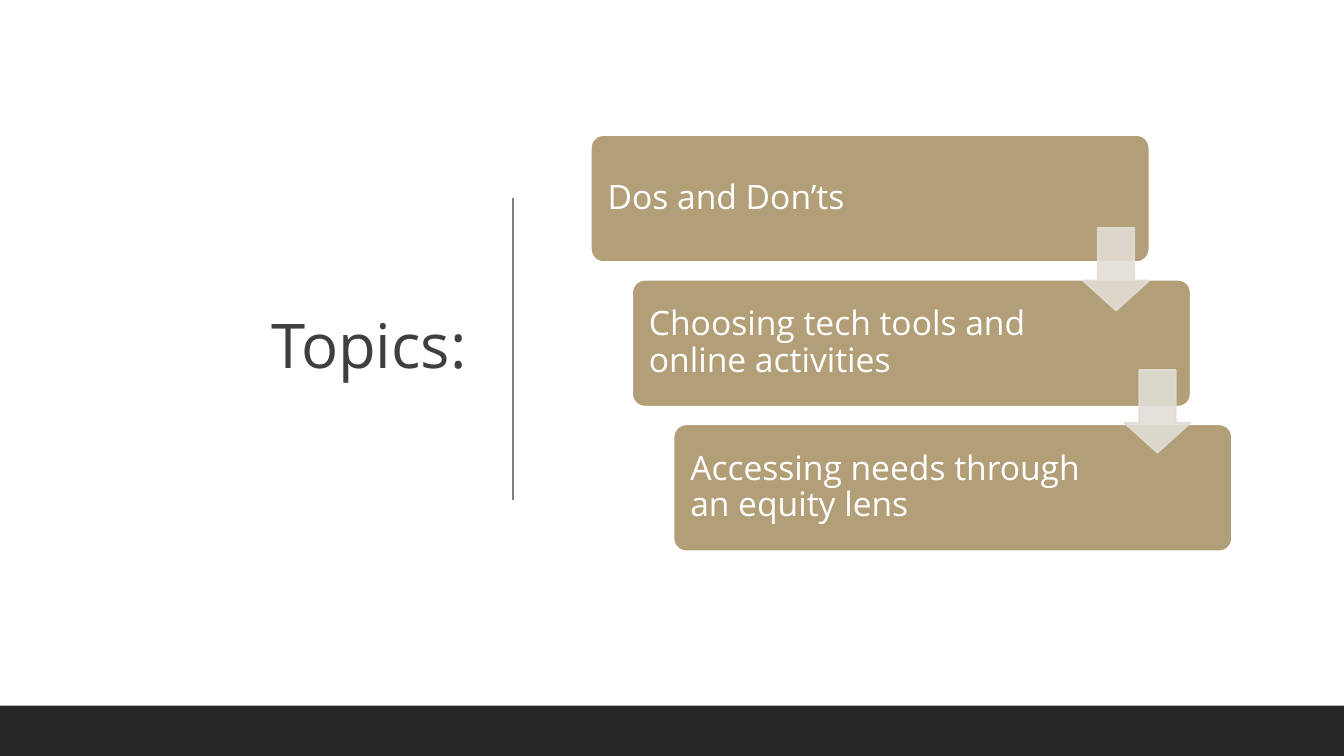
from lxml import etree
from pptx import Presentation
from pptx.dml.color import RGBColor
from pptx.enum.shapes import MSO_CONNECTOR, MSO_SHAPE
from pptx.enum.text import MSO_ANCHOR, PP_ALIGN
from pptx.oxml.ns import qn
from pptx.util import Inches, Pt

RECT, ROUND_RECT = MSO_SHAPE.RECTANGLE, MSO_SHAPE.ROUNDED_RECTANGLE
DOWN_ARROW, STRAIGHT = MSO_SHAPE.DOWN_ARROW, MSO_CONNECTOR.STRAIGHT
MIDDLE, LEFT, RIGHT = MSO_ANCHOR.MIDDLE, PP_ALIGN.LEFT, PP_ALIGN.RIGHT

FONT = "Open Sans"
WHITE = RGBColor(0xFF, 0xFF, 0xFF)
TITLE_GREY = RGBColor(0x3F, 0x3F, 0x3F)
RULE_GREY = RGBColor(0x7F, 0x7F, 0x7F)
BAR_BLACK = RGBColor(0x26, 0x26, 0x26)
CARD_TAN = RGBColor(0xB2, 0x9F, 0x78)
ARROW_COLORS = [RGBColor(0xE2, 0xDE, 0xD5), RGBColor(0xE0, 0xDE, 0xD5)]

SLIDE_W, SLIDE_H = 13.33, 7.5
TOPICS = [
    "Dos and Don’ts",
    "Choosing tech tools and online activities",
    "Accessing needs through an equity lens",
]


def add_block(slide, kind, x, y, w, h, fill, line=None):
    sp = slide.shapes.add_shape(kind, Inches(x), Inches(y), Inches(w), Inches(h))
    sp.shadow.inherit = False
    sp.fill.solid()
    sp.fill.fore_color.rgb = fill
    if line is None:
        sp.line.fill.background()
    else:
        sp.line.color.rgb = line
        sp.line.width = Pt(1.25)
    return sp


def write_text(sp, text, size, color, align, insets):
    tf = sp.text_frame
    tf.word_wrap = True
    tf.vertical_anchor = MIDDLE
    tf.margin_left, tf.margin_top, tf.margin_right, tf.margin_bottom = map(Inches, insets)
    p = tf.paragraphs[0]
    p.alignment = align
    p.line_spacing = 0.9
    r = p.add_run()
    r.text = text
    r.font.name = FONT
    r.font.size = Pt(size)
    r.font.color.rgb = color


def set_alpha(sp, percent):
    # Fill and outline share the same transparency
    for color in sp._element.spPr.iter(qn("a:srgbClr")):
        etree.SubElement(color, qn("a:alpha")).set("val", str(percent * 1000))


def add_title(slide, x, y, w, h):
    sp = slide.shapes.add_textbox(Inches(x), Inches(y), Inches(w), Inches(h))
    write_text(sp, "Topics:", 44, TITLE_GREY, RIGHT, (0.1, 0.05, 0.1, 0.05))


def add_divider(slide, x, y, h):
    line = slide.shapes.add_connector(STRAIGHT, Inches(x), Inches(y), Inches(x), Inches(y + h))
    line.line.color.rgb = RULE_GREY
    line.line.width = Pt(1)
    etree.SubElement(line._element.spPr, qn("a:effectLst"))


def add_staircase(slide, x, y, w, h):
    card_w, card_h = 5.54, 1.26
    steps = len(TOPICS) - 1
    step_x, step_y = (w - card_w) / steps, (h - card_h) / steps

    # Topic cards, with room at the right for the arrows
    for i, topic in enumerate(TOPICS):
        card = add_block(slide, ROUND_RECT, x + i * step_x, y + i * step_y,
                         card_w, card_h, CARD_TAN, WHITE)
        card.adjustments[0] = 0.1
        write_text(card, topic, 24, WHITE, LEFT, (0.13, 0.1, 1.2, 0.1))

    # Arrows over the gaps between cards
    arrow_w, arrow_h, arrow_step = 0.66, 0.82, 1.41
    for i, color in enumerate(ARROW_COLORS):
        arrow = add_block(slide, DOWN_ARROW, x + card_w - arrow_w + i * step_x,
                          y + 0.92 + i * arrow_step, arrow_w, arrow_h, color, color)
        # Shaft width, then head length
        arrow.adjustments[0] = 0.55
        arrow.adjustments[1] = 0.45
        set_alpha(arrow, 90)


def main():
    prs = Presentation()
    prs.slide_width, prs.slide_height = Inches(SLIDE_W), Inches(SLIDE_H)
    slide = prs.slides.add_slide(prs.slide_layouts[6])
    slide.background.fill.solid()
    slide.background.fill.fore_color.rgb = WHITE

    add_title(slide, 0.7, 0.69, 4.03, 5.53)
    add_divider(slide, 5.09, 1.96, 3)
    add_block(slide, RECT, 0, SLIDE_H - 0.5, SLIDE_W, 0.5, BAR_BLACK)
    add_staircase(slide, 5.86, 1.34, 6.36, 4.13)
    prs.save("out.pptx")


if __name__ == "__main__":
    main()
